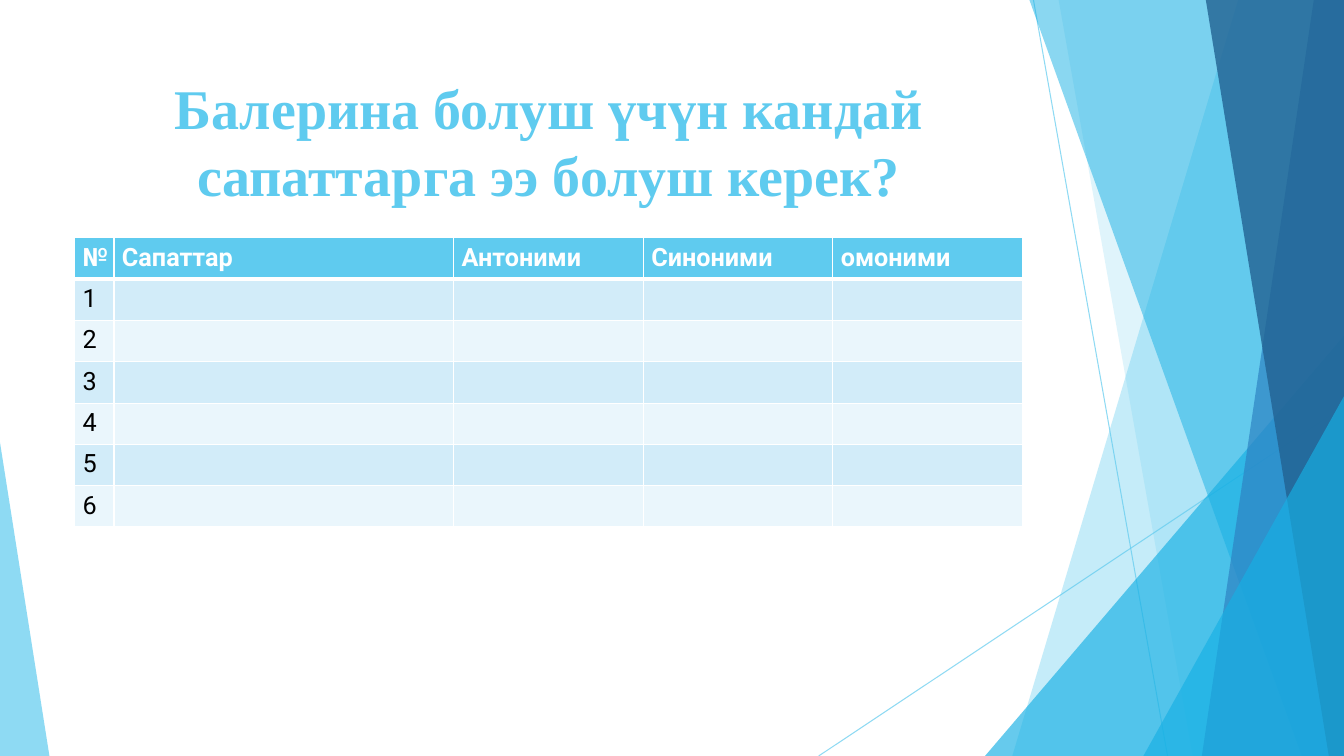
"""Builds a slide with a title, a table of qualities and a faceted backdrop."""
import dataclasses

import lxml.etree
import pptx
import pptx.dml.color
import pptx.enum.shapes
import pptx.enum.text
import pptx.oxml.ns
import pptx.util

PX = 9144
WIDTH, HEIGHT = 1333, 750
COLORS = {
    "sky": "5FCBEF", "cyan": "17B0E4", "blue": "2E83C3", "navy": "226292",
    "band_dark": "D2ECF9", "band_light": "EAF6FC", "white": "FFFFFF", "black": "000000",
}
TITLE = "Балерина болуш үчүн кандай сапаттарга ээ болуш керек?"
HEADERS = ["№", "Сапаттар", "Антоними", "Синоними", "омоними"]
COLUMN_WIDTHS = [39, 337, 188, 188, 188]
ROW_COUNT, ROW_HEIGHT = 7, 41


@dataclasses.dataclass(frozen=True)
class Ray:
    start: tuple[int, int]
    end: tuple[int, int]


@dataclasses.dataclass(frozen=True)
class Facet:
    top_left: int
    bottom_left: int
    color: str
    alpha: int


@dataclasses.dataclass(frozen=True)
class Corner:
    left: int
    top: int
    width: int
    apex: int
    color: str
    alpha: int


BACKDROP = [
    Ray((1025, 0), (1158, 750)),
    Ray((1333, 403), (812, 750)),
    Facet(1228, 1004, "sky", 36),
    Facet(1050, 1183, "sky", 20),
    Corner(977, 333, 356, 1, "cyan", 66),
    Facet(1021, 1291, "cyan", 50),
    Facet(1303, 1192, "blue", 70),
    Facet(1196, 1318, "navy", 80),
    Corner(1134, 393, 199, 1, "cyan", 66),
    Corner(0, 439, 49, 0, "sky", 70),
]


def px(n: int) -> pptx.util.Emu:
    """Turn px into EMU."""
    return pptx.util.Emu(n * PX)


def rgb(name: str) -> pptx.dml.color.RGBColor:
    """Look up a named colour."""
    return pptx.dml.color.RGBColor.from_string(COLORS[name])


def set_alpha(element: lxml.etree._Element, percent: int) -> None:
    """Make the first colour of an element translucent."""
    color = next(element.iter(pptx.oxml.ns.qn("a:srgbClr")))
    lxml.etree.SubElement(color, pptx.oxml.ns.qn("a:alpha"), val=str(percent * 1000))


def paint(sp: pptx.shapes.autoshape.Shape, color: str, alpha: int) -> None:
    """Give a shape a translucent fill without outline or shadow."""
    sp.shadow.inherit = False
    sp.fill.solid()
    sp.fill.fore_color.rgb = rgb(color)
    sp.line.fill.background()
    set_alpha(sp.element.spPr, alpha)


def draw_ray(s: pptx.slide.Slide, ray: Ray) -> None:
    """Draw a thin line of the backdrop."""
    kind = pptx.enum.shapes.MSO_CONNECTOR.STRAIGHT
    line = s.shapes.add_connector(kind, *map(px, ray.start + ray.end))
    line.line.width = pptx.util.Pt(0.75)
    line.line.color.rgb = rgb("sky")
    sp_pr = line.element.spPr
    set_alpha(sp_pr, 70)
    lxml.etree.SubElement(sp_pr, pptx.oxml.ns.qn("a:effectLst"))


def draw_facet(s: pptx.slide.Slide, facet: Facet) -> None:
    """Draw a full-height panel that reaches the right edge."""
    builder = s.shapes.build_freeform(facet.top_left, 0, scale=PX)
    builder.add_line_segments([(WIDTH, 0), (WIDTH, HEIGHT), (facet.bottom_left, HEIGHT)])
    paint(builder.convert_to_shape(), facet.color, facet.alpha)


def draw_corner(s: pptx.slide.Slide, corner: Corner) -> None:
    """Draw a right triangle standing on the bottom edge."""
    box = (corner.left, corner.top, corner.width, HEIGHT - corner.top)
    kind = pptx.enum.shapes.MSO_SHAPE.ISOSCELES_TRIANGLE
    sp = s.shapes.add_shape(kind, *map(px, box))
    sp.adjustments[0] = corner.apex
    paint(sp, corner.color, corner.alpha)


def place_title(s: pptx.slide.Slide) -> None:
    """Fill the title placeholder and bring it in front of the backdrop."""
    title = s.shapes.title
    title.left, title.top, title.width, title.height = map(px, (74, 67, 940, 144))
    tf = title.text_frame
    tf.text = TITLE
    tf.word_wrap = True
    tf.auto_size = pptx.enum.text.MSO_AUTO_SIZE.NONE
    tf.vertical_anchor = pptx.enum.text.MSO_ANCHOR.BOTTOM
    p = tf.paragraphs[0]
    p.alignment = pptx.enum.text.PP_ALIGN.CENTER
    p.font.name, p.font.size, p.font.bold = "Times New Roman", pptx.util.Pt(40), True
    p.font.color.rgb = rgb("sky")
    s.shapes.element.append(title.element)


def set_borders(cell: pptx.table._Cell, widths: dict[str, int]) -> None:
    """Put white borders, with widths in points, before the cell's fill."""
    tc_pr = cell.fill._xPr
    for i, (side, points) in enumerate(widths.items()):
        ln = lxml.etree.Element(pptx.oxml.ns.qn(f"a:ln{side}"), w=str(pptx.util.Pt(points)))
        fill = lxml.etree.SubElement(ln, pptx.oxml.ns.qn("a:solidFill"))
        lxml.etree.SubElement(fill, pptx.oxml.ns.qn("a:srgbClr"), val=COLORS["white"])
        tc_pr.insert(i, ln)


def draw_table(s: pptx.slide.Slide) -> None:
    """Draw the banded table with numbered rows."""
    box = (74, 236, sum(COLUMN_WIDTHS), ROW_COUNT * ROW_HEIGHT)
    table = s.shapes.add_table(ROW_COUNT, len(HEADERS), *map(px, box)).table
    for column, width in zip(table.columns, COLUMN_WIDTHS):
        column.width = px(width)
    for i, row in enumerate(table.rows):
        row.height = px(ROW_HEIGHT)
        texts = HEADERS if i == 0 else [str(i)] + [""] * (len(HEADERS) - 1)
        band = "sky" if i == 0 else "band_dark" if i % 2 else "band_light"
        for cell, text in zip(row.cells, texts):
            cell.text = text
            cell.margin_left = cell.margin_right = px(8)
            cell.margin_top = cell.margin_bottom = px(5)
            cell.fill.solid()
            cell.fill.fore_color.rgb = rgb(band)
            set_borders(cell, {"L": 1, "R": 1, "T": 3 if i == 1 else 1, "B": 1 if i else 3})
            p = cell.text_frame.paragraphs[0]
            p.font.name, p.font.size, p.font.bold = "Roboto", pptx.util.Pt(18), i == 0
            p.font.color.rgb = rgb("black" if i else "white")


def main() -> None:
    """Build and save the slide."""
    prs = pptx.Presentation()
    prs.slide_width, prs.slide_height = px(WIDTH), px(HEIGHT)
    s = prs.slides.add_slide(prs.slide_layouts[5])
    draw = {Ray: draw_ray, Facet: draw_facet, Corner: draw_corner}
    for item in BACKDROP:
        draw[type(item)](s, item)
    place_title(s)
    draw_table(s)
    prs.save("out.pptx")


if __name__ == "__main__":
    main()
